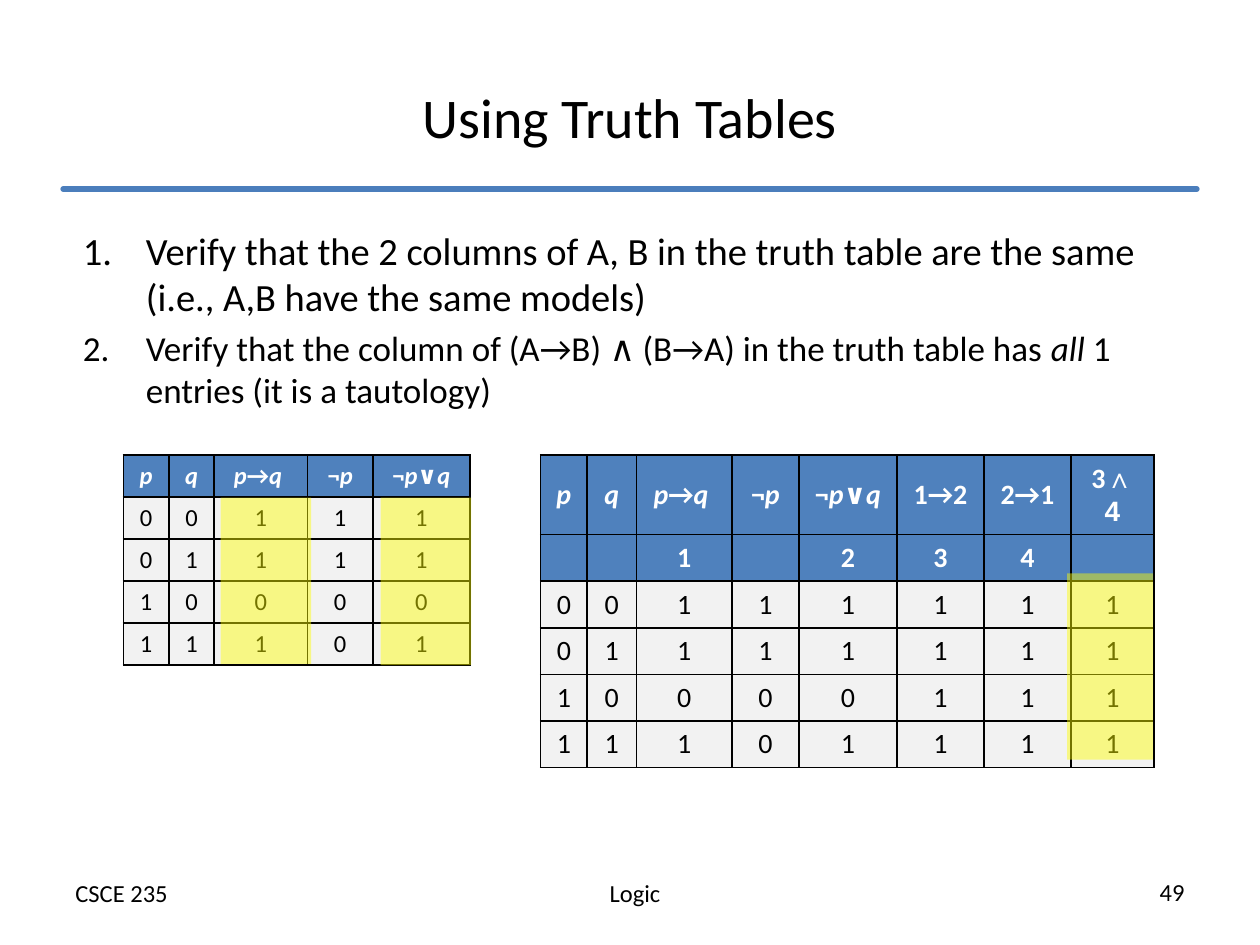
from dataclasses import dataclass

from lxml import etree
from pptx import Presentation
from pptx.dml.color import RGBColor
from pptx.enum.shapes import MSO_CONNECTOR, MSO_SHAPE
from pptx.enum.text import MSO_ANCHOR, PP_ALIGN
from pptx.oxml.ns import qn
from pptx.util import Inches, Pt

LEFT, CENTER, RIGHT = PP_ALIGN.LEFT, PP_ALIGN.CENTER, PP_ALIGN.RIGHT
TOP, MIDDLE = MSO_ANCHOR.TOP, MSO_ANCHOR.MIDDLE
RECTANGLE = MSO_SHAPE.RECTANGLE
STRAIGHT = MSO_CONNECTOR.STRAIGHT

COLORS = {
    "text": "000000",
    "header_text": "FFFFFF",
    "header": "4F81BD",
    "body": "F2F2F2",
    "rule": "4B7EBC",
    "border": "000000",
    "highlight": "FFFF00",
}
FONT = "Calibri"


@dataclass
class TruthTable:
    left: float
    top: float
    columns: list[float]
    row_heights: list[float]
    headers: list[list[str]]
    values: list[str]
    size: int
    header_anchor: MSO_ANCHOR


@dataclass
class Box:
    left: float
    top: float
    width: float
    height: float

    def lengths(self) -> list[int]:
        return [Inches(v) for v in (self.left, self.top, self.width, self.height)]


def rgb(name: str) -> RGBColor:
    return RGBColor.from_string(COLORS[name])


def write(paragraph, text: str, *, size: int, color: str = "text",
          bold: bool = False, align: PP_ALIGN = LEFT) -> None:
    """Write text; parts between asterisks are italic, between bars Arial."""
    paragraph.alignment = align
    for i, part in enumerate(text.split("*")):
        for j, piece in enumerate(part.split("|")):
            if not piece:
                continue
            run = paragraph.add_run()
            run.text = piece
            font = run.font
            font.name = "Arial" if j % 2 else FONT
            font.size = Pt(size)
            font.bold = bold
            font.italic = i % 2 == 1
            font.color.rgb = rgb(color)
    if not text:  # an empty cell keeps the line height of its row
        etree.SubElement(paragraph._p, qn("a:endParaRPr"), sz=str(size * 100))


def add_text_box(slide, box: Box):
    frame = slide.shapes.add_textbox(*box.lengths()).text_frame
    frame.word_wrap = True
    return frame


def number_paragraph(paragraph) -> None:
    properties = paragraph._p.get_or_add_pPr()
    properties.set("marL", str(Inches(0.56)))
    properties.set("indent", str(Inches(-0.5)))
    etree.SubElement(properties, qn("a:buFont"), typeface="+mj-lt")
    etree.SubElement(properties, qn("a:buAutoNum"), type="arabicPeriod")


def border_cell(cell) -> None:
    properties = cell._tc.get_or_add_tcPr()
    for index, side in enumerate(("lnL", "lnR", "lnT", "lnB")):
        line = etree.Element(qn(f"a:{side}"), w=str(Pt(1)))
        fill = etree.SubElement(line, qn("a:solidFill"))
        etree.SubElement(fill, qn("a:srgbClr"), val=COLORS["border"])
        properties.insert(index, line)


def add_truth_table(slide, spec: TruthTable) -> None:
    rows = spec.headers + [list(row) for row in spec.values]
    box = Box(spec.left, spec.top, sum(spec.columns), sum(spec.row_heights))
    table = slide.shapes.add_table(len(rows), len(spec.columns), *box.lengths()).table
    table.first_row = table.horz_banding = False
    for column, width in zip(table.columns, spec.columns):
        column.width = Inches(width)
    for row, height in zip(table.rows, spec.row_heights):
        row.height = Inches(height)
    for r, texts in enumerate(rows):
        is_header = r < len(spec.headers)
        for c, text in enumerate(texts):
            cell = table.cell(r, c)
            cell.fill.solid()
            cell.fill.fore_color.rgb = rgb("header" if is_header else "body")
            cell.vertical_anchor = spec.header_anchor if r == 0 else TOP
            border_cell(cell)
            write(cell.text_frame.paragraphs[0], text, size=spec.size, bold=is_header,
                  color="header_text" if is_header else "text", align=CENTER)


def add_highlight(slide, box: Box) -> None:
    shape = slide.shapes.add_shape(RECTANGLE, *box.lengths())
    shape.shadow.inherit = False
    shape.line.fill.background()
    shape.fill.solid()
    shape.fill.fore_color.rgb = rgb("highlight")
    color = shape.fill._xPr.find(qn("a:solidFill"))[0]
    etree.SubElement(color, qn("a:alpha"), val="45000")


def add_rule(slide) -> None:
    rule = slide.shapes.add_connector(STRAIGHT, Inches(0.5), Inches(1.5),
                                      Inches(9.5), Inches(1.5))
    rule.line.color.rgb = rgb("rule")
    rule.line.width = Pt(3)
    rule.line._get_or_add_ln().set("cap", "rnd")
    etree.SubElement(rule._element.spPr, qn("a:effectLst"))


FOOTERS = [
    (Box(3.58, 6.92, 2.92, 0.34), "Logic", CENTER),
    (Box(0.5, 6.92, 2.92, 0.34), "CSCE 235", LEFT),
    (Box(6.58, 6.91, 2.92, 0.34), "49", RIGHT),
]
STEPS = [
    ("Verify that the 2 columns of A, B in the truth table are the same "
     "(i.e., A,B have the same models)", 22),
    ("Verify that the column of (A→B) ∧ (B→A) in the truth table has *all* 1 "
     "entries (it is a tautology)", 20),
]
FORMULAS = ["*p*", "*q*", "*p*→*q *", "¬*p*", "¬*p*∨*q*"]
TABLES = [
    TruthTable(0.98, 3.61, [0.36, 0.36, 0.74, 0.52, 0.77], [0.33] * 5,
               [FORMULAS], ["00111", "01111", "10000", "11101"], 14, TOP),
    TruthTable(4.29, 3.61, [0.37, 0.39, 0.76, 0.53, 0.78, 0.69, 0.69, 0.66],
               [0.62] + [0.37] * 5,
               [FORMULAS + ["1→2", "2→1", "3|∧ 4|"],
                ["", "", "1", "", "2", "3", "4", ""]],
               ["00111111", "01111111", "10000111", "11101111"], 16, MIDDLE),
]
HIGHLIGHTS = [
    Box(1.75, 3.95, 0.72, 1.32),
    Box(3.02, 3.95, 0.72, 1.33),
    Box(8.47, 4.55, 0.68, 1.48),
]


def main() -> None:
    presentation = Presentation()
    presentation.slide_width, presentation.slide_height = Inches(10), Inches(7.5)
    slide = presentation.slides.add_slide(presentation.slide_layouts[5])

    # Title and rule
    title = slide.shapes.title
    title.left, title.top, title.width, title.height = Box(0.5, 0.3, 9, 1.25).lengths()
    title.text_frame.vertical_anchor = MIDDLE
    write(title.text_frame.paragraphs[0], "Using Truth Tables", size=32, align=CENTER)
    add_rule(slide)

    # Footer
    for box, text, align in FOOTERS:
        write(add_text_box(slide, box).paragraphs[0], text, size=14, align=align)

    # Numbered steps
    steps = add_text_box(slide, Box(0.5, 1.75, 9, 4.95))
    for index, (text, size) in enumerate(STEPS):
        paragraph = steps.add_paragraph() if index else steps.paragraphs[0]
        write(paragraph, text, size=size)
        paragraph.space_before = Pt(size * 0.2)
        number_paragraph(paragraph)

    # Truth tables and highlighted columns
    for table in TABLES:
        add_truth_table(slide, table)
    for box in HIGHLIGHTS:
        add_highlight(slide, box)

    presentation.save("out.pptx")


if __name__ == "__main__":
    main()
